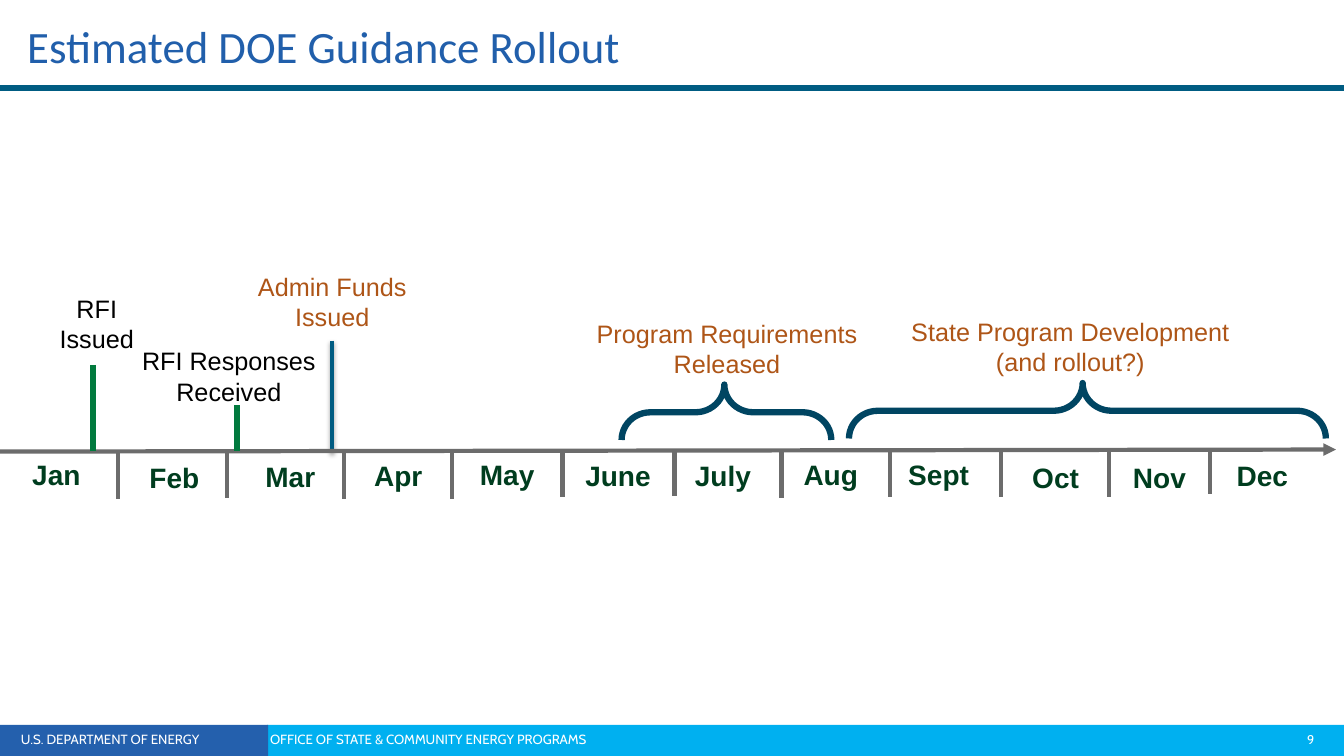
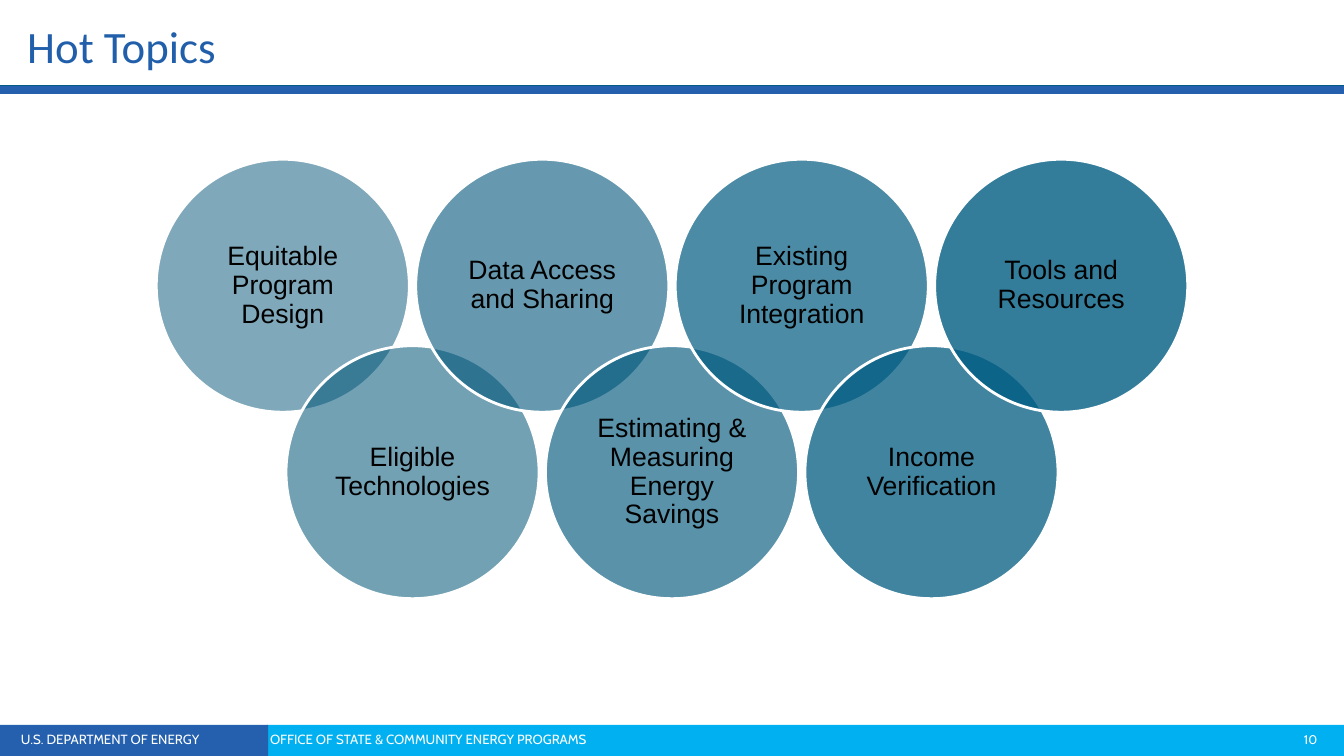
from lxml import etree
from pptx import Presentation
from pptx import util as u
from pptx.dml.color import RGBColor
from pptx.enum import shapes, text
from pptx.oxml.ns import qn

COLORS = {
    "title": "215FAB", "band": "2460AD", "sky": "00B0F0", "teal": "005C82",
    "axis": "6C6C6C", "month": "003D1F", "done": "017A3E", "planned": "AE5517",
    "brace": "004562", "black": "000000", "white": "FFFFFF",
}
ALIGN = text.PP_ALIGN
FORM = shapes.MSO_SHAPE


def write(box, words, size, color, font="Arial", bold=False, align=ALIGN.CENTER,
          anchor=text.MSO_ANCHOR.TOP, spacing=1.0, margin=None):
    frame = box.text_frame
    frame.word_wrap = True
    frame.auto_size = text.MSO_AUTO_SIZE.NONE
    frame.vertical_anchor = anchor
    if margin is not None:
        frame.margin_left = frame.margin_right = u.Inches(margin)
        frame.margin_top = frame.margin_bottom = u.Inches(margin)
    for index, line in enumerate(words.split("\n")):
        para = frame.paragraphs[0] if index == 0 else frame.add_paragraph()
        para.alignment = align
        para.line_spacing = spacing
        span = para.add_run()
        span.text = line
        span.font.name = font
        span.font.size = u.Pt(size)
        span.font.bold = bold
        span.font.color.rgb = RGBColor.from_string(COLORS[color])


def draw_line(page, start, end, color, width):
    line = page.shapes.add_connector(
        shapes.MSO_CONNECTOR.STRAIGHT, *[u.Inches(v) for v in (*start, *end)])
    line.line.color.rgb = RGBColor.from_string(COLORS[color])
    line.line.width = u.Pt(width)
    effects = etree.SubElement(line._element.spPr, qn("a:effectLst"))
    return line, effects


deck = Presentation()
deck.slide_width = u.Inches(13.33)
deck.slide_height = u.Inches(7.5)

bands = [
    (2.65, 7.19, 10.68, 0.31, "sky", "sky", 0),
    (0, 7.19, 2.66, 0.31, "band", "band", 0),
    (0, 0.86, 13.33, 0.03, "band", "teal", 2),
]
thick_rule = (0, 0.86, 13.33, 0.07, "band", "band", 0.75)
pages = []
for number, heading, extra_bands in [
    (9, "Estimated DOE Guidance Rollout", []),
    (10, "Hot Topics", [thick_rule]),
]:
    page = deck.slides.add_slide(deck.slide_layouts[5])
    pages.append(page)
    title = page.shapes.title
    title.left, title.top = u.Inches(0.17), u.Inches(0.04)
    title.width, title.height = u.Inches(12.72), u.Inches(0.89)
    write(title, heading, 32, "title", font="Calibri", align=ALIGN.LEFT,
          anchor=text.MSO_ANCHOR.MIDDLE, spacing=0.9)

    for left, top, width, height, fill, edge, weight in bands + extra_bands:
        band = page.shapes.add_shape(
            FORM.RECTANGLE, *[u.Inches(v) for v in (left, top, width, height)])
        band.shadow.inherit = False
        band.fill.solid()
        band.fill.fore_color.rgb = RGBColor.from_string(COLORS[fill])
        if weight:
            band.line.color.rgb = RGBColor.from_string(COLORS[edge])
            band.line.width = u.Pt(weight)
        else:
            band.line.fill.background()

    for left, width, words, size, align in [
        (0.11, 2.5, "U.S. DEPARTMENT OF ENERGY", 9.5, ALIGN.LEFT),
        (2.58, 4.74, "OFFICE OF STATE & COMMUNITY ENERGY PROGRAMS", 9.5, ALIGN.LEFT),
        (12.67, 0.66, str(number), 9, ALIGN.CENTER),
    ]:
        box = page.shapes.add_textbox(
            u.Inches(left), u.Inches(7.21), u.Inches(width), u.Inches(0.26))
        write(box, words, size, "white", font="Cabin", align=align)

rollout, topics_page = pages

marker, effects = draw_line(rollout, (3.29, 3.38), (3.29, 4.49), "teal", 3)
shadow = etree.SubElement(
    effects, qn("a:outerShdw"), blurRad=str(u.Pt(3.1)), dist=str(u.Pt(1.8)),
    dir="5400000", rotWithShape="0")
shade = etree.SubElement(shadow, qn("a:srgbClr"), val=COLORS["black"])
etree.SubElement(shade, qn("a:alpha"), val="35000")

axis, effects = draw_line(rollout, (0, 4.48), (13.25, 4.46), "axis", 3)
etree.SubElement(axis.line._get_or_add_ln(), qn("a:tailEnd"), type="triangle")

months = [
    ("Jan", 0.56, 4.49), ("Feb", 1.73, 4.52), ("Mar", 2.88, 4.51),
    ("Apr", 3.95, 4.5), ("May", 5.03, 4.49), ("June", 6.13, 4.5),
    ("July", 7.17, 4.5), ("Aug", 8.24, 4.49), ("Sept", 9.31, 4.49),
    ("Oct", 10.47, 4.52), ("Nov", 11.5, 4.52), ("Dec", 12.52, 4.5),
]
for month, center, top in months:
    box = rollout.shapes.add_textbox(
        u.Inches(center - 0.5), u.Inches(top), u.Inches(1), u.Inches(0.44))
    write(box, month, 20, "month", bold=True)

ticks = [
    (1.17, 4.95), (2.25, 4.94), (3.41, 4.95), (4.48, 4.95), (5.58, 4.93), (6.69, 4.92),
    (7.75, 4.94), (8.83, 4.93), (9.93, 4.93), (11, 4.93), (12, 4.9),
]
for x, bottom in ticks:
    draw_line(rollout, (x, 4.47), (x, bottom), "axis", 3)

for x, top in [(0.92, 3.62), (2.35, 4.02)]:
    draw_line(rollout, (x, top), (x, 4.47), "done", 4.5)

events = [
    ("RFI\nIssued", -0.15, 2.86, 2.22, "black"),
    ("RFI Responses\nReceived", 1.28, 3.38, 1.98, "black"),
    ("Admin Funds\nIssued", 1.6, 2.64, 3.39, "planned"),
    ("Program Requirements\nReleased", 5.62, 3.11, 3.18, "planned"),
    ("State Program Development\n(and rollout?)", 8.71, 3.09, 3.81, "planned"),
]
for words, left, top, width, color in events:
    box = rollout.shapes.add_textbox(
        u.Inches(left), u.Inches(top), u.Inches(width), u.Inches(0.71))
    write(box, words, 18, color)

for left, top, length in [(6.93, 3.05, 2.08), (10.51, 1.71, 4.73)]:
    brace = rollout.shapes.add_shape(
        FORM.LEFT_BRACE, u.Inches(left), u.Inches(top), u.Inches(0.55), u.Inches(length))
    brace.rotation = 90
    brace.adjustments[0], brace.adjustments[1] = 0.52, 0.51
    brace.shadow.inherit = False
    brace.fill.background()
    brace.line.color.rgb = RGBColor.from_string(COLORS["brace"])
    brace.line.width = u.Pt(4.5)

topics = [
    "Equitable Program Design", "Eligible Technologies", "Data Access and Sharing",
    "Estimating & Measuring Energy Savings", "Existing Program Integration",
    "Income Verification", "Tools and Resources",
]
last = len(topics) - 1
for index, topic in enumerate(topics):
    circle = topics_page.shapes.add_shape(
        FORM.OVAL, u.Inches(1.55 + 7.72 * index / last),
        u.Inches(3.43 if index % 2 else 1.58), u.Inches(2.51), u.Inches(2.51))
    circle.shadow.inherit = False
    circle.fill.solid()
    circle.fill.fore_color.rgb = RGBColor(
        0, round(83 + 10 * index / last), round(118 + 13 * index / last))
    tint = circle._element.spPr.find(qn("a:solidFill"))[0]
    etree.SubElement(tint, qn("a:alpha"), val=str((50 + 5 * index) * 1000))
    circle.line.color.rgb = RGBColor.from_string(COLORS["white"])
    circle.line.width = u.Pt(2)
    write(circle, topic, 19, "black", anchor=text.MSO_ANCHOR.MIDDLE,
          spacing=0.9, margin=0.08)

deck.save("out.pptx")
